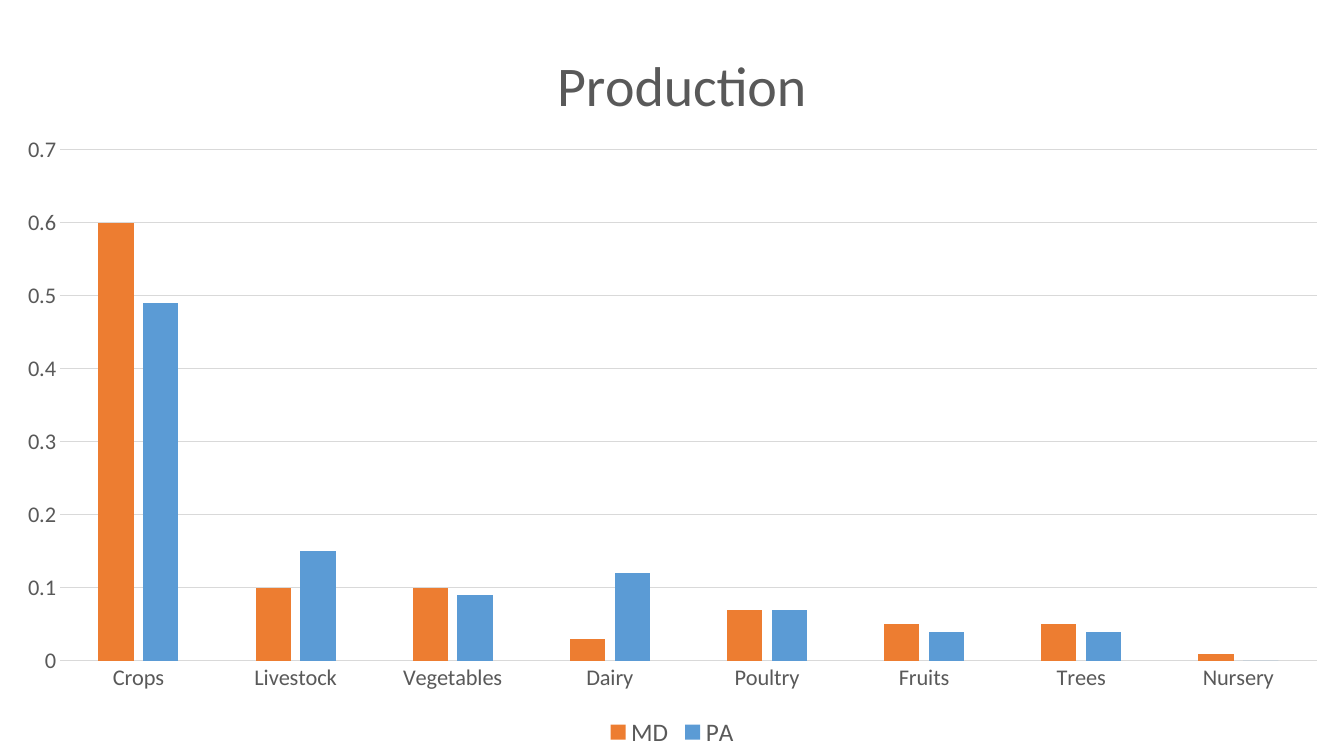
import dataclasses

import lxml.etree
import pptx
import pptx.chart.data
import pptx.dml.color
import pptx.enum.chart
import pptx.util

SCALE = 914400 / 100.8
WIDTH, HEIGHT = 1344, 756
GREY, PALE = "595959", "D9D9D9"
CROPS = ["Crops", "Livestock", "Vegetables", "Dairy",
         "Poultry", "Fruits", "Trees", "Nursery"]


@dataclasses.dataclass
class State:
    name: str
    color: str
    shares: list[float]


@dataclasses.dataclass
class Place:
    tag: str
    index: int  # position of the layout among the element's children
    box: dict[str, int]
    inner: bool = False


STATES = [
    State("MD", "ED7D31", [0.6, 0.1, 0.1, 0.03, 0.07, 0.05, 0.05, 0.01]),
    State("PA", "5B9BD5", [0.49, 0.15, 0.09, 0.12, 0.07, 0.04, 0.04, 0]),
]
PLACES = [
    Place("plotArea", 0, {"x": 60, "y": 150, "w": 1257, "h": 511}, True),
    Place("title", 1, {"x": 547, "y": 37}),
    Place("legend", 1, {"x": 602, "y": 718, "w": 140, "h": 36}),
]


def emu(px: int) -> int:
    return round(px * SCALE)


def rgb(color: str) -> pptx.dml.color.RGBColor:
    return pptx.dml.color.RGBColor.from_string(color)


def style(font, size: int) -> None:
    font.name = "Calibri"
    font.size = pptx.util.Pt(size)
    font.bold = False
    font.color.rgb = rgb(GREY)


def rule(line) -> None:
    line.color.rgb = rgb(PALE)
    line.width = pptx.util.Pt(0.75)


def locate(chart, place: Place) -> None:
    """Give a chart part a fixed position as fractions of the slide."""
    space = chart._chartSpace
    names = {"c": space.nsmap["c"]}
    part = space.find(f"c:chart//c:{place.tag}", names)
    for old in part.findall("c:layout", names):
        part.remove(old)

    def add(parent, tag: str, **attrs: str):
        return lxml.etree.SubElement(parent, f"{{{names['c']}}}{tag}", **attrs)

    layout = add(part, "layout")
    part.insert(place.index, layout)
    manual = add(layout, "manualLayout")
    if place.inner:
        add(manual, "layoutTarget", val="inner")
    for key in ("x", "y"):
        add(manual, f"{key}Mode", val="edge")
    for key, px in place.box.items():
        whole = WIDTH if key in ("x", "w") else HEIGHT
        add(manual, key, val=str(round(px / whole, 4)))


def draw(slide) -> None:
    data = pptx.chart.data.CategoryChartData()
    data.categories = CROPS
    for state in STATES:
        data.add_series(state.name, state.shares)
    kinds = pptx.enum.chart
    chart = slide.shapes.add_chart(
        kinds.XL_CHART_TYPE.COLUMN_CLUSTERED, 0, 0,
        emu(WIDTH), emu(HEIGHT), data).chart
    style(chart.font, 10)

    # Title
    chart.has_title = True
    frame = chart.chart_title.text_frame
    frame.text = "Production"
    style(frame.paragraphs[0].font, 40)

    # Columns
    plot = chart.plots[0]
    plot.gap_width, plot.overlap = 219, -27
    plot.vary_by_categories = False
    for series, state in zip(plot.series, STATES):
        series.format.fill.solid()
        series.format.fill.fore_color.rgb = rgb(state.color)

    # Axes
    for axis in (chart.category_axis, chart.value_axis):
        axis.major_tick_mark = kinds.XL_TICK_MARK.NONE
        axis.minor_tick_mark = kinds.XL_TICK_MARK.NONE
        style(axis.tick_labels.font, 16)
    rule(chart.category_axis.format.line)
    value = chart.value_axis
    value.minimum_scale, value.maximum_scale, value.major_unit = 0, 0.7, 0.1
    value.format.line.fill.background()
    rule(value.major_gridlines.format.line)

    # Legend
    chart.has_legend = True
    chart.legend.position = kinds.XL_LEGEND_POSITION.BOTTOM
    chart.legend.include_in_layout = False
    style(chart.legend.font, 18)

    for place in PLACES:
        locate(chart, place)


def main() -> None:
    deck = pptx.Presentation()
    deck.slide_width, deck.slide_height = emu(WIDTH), emu(HEIGHT)
    blank = deck.slide_layouts[6]
    draw(deck.slides.add_slide(blank))
    deck.save("out.pptx")


if __name__ == "__main__":
    main()
